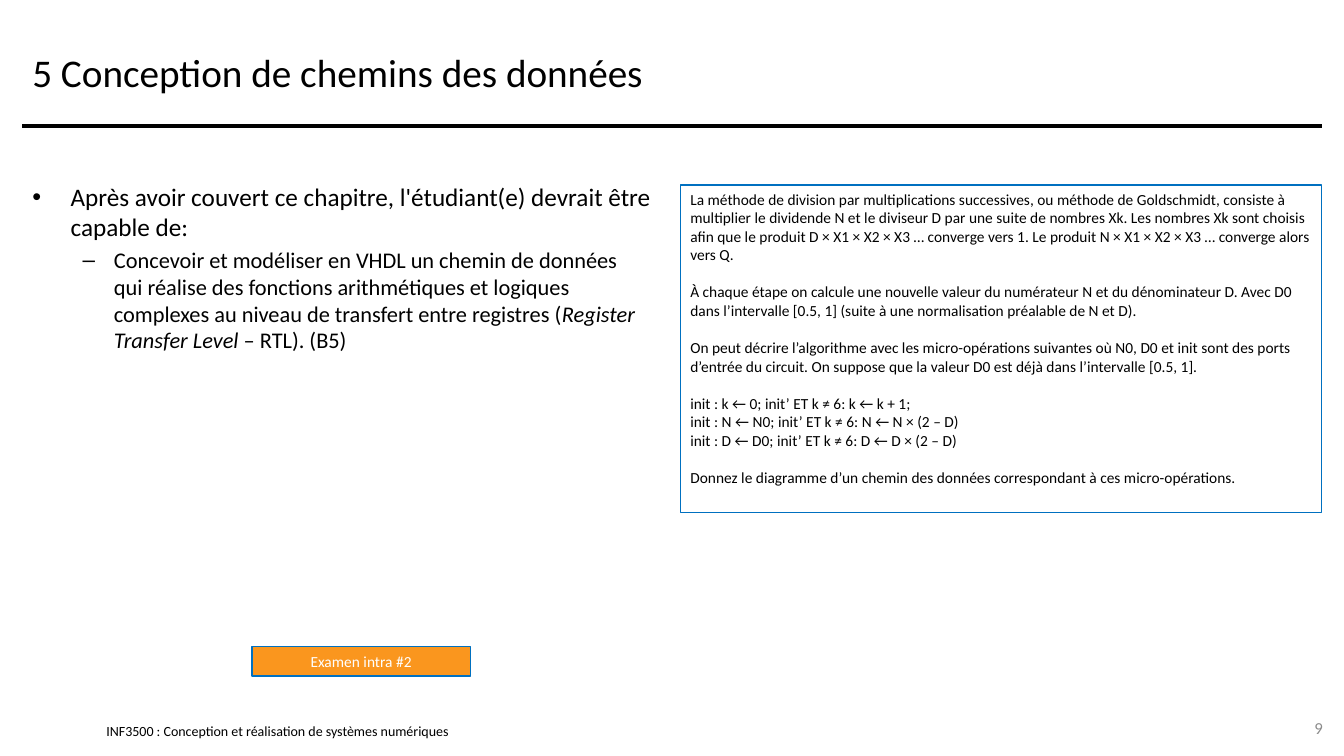
import pptx
import pptx.util
import pptx.dml.color
import pptx.enum.shapes
import pptx.enum.text
import lxml.etree
from pptx.oxml.ns import qn

Pt = pptx.util.Pt
RGBColor = pptx.dml.color.RGBColor
Align = pptx.enum.text.PP_ALIGN
Anchor = pptx.enum.text.MSO_ANCHOR

BLACK = RGBColor(0, 0, 0)
WHITE = RGBColor(255, 255, 255)
GREY = RGBColor(0x8C, 0x8C, 0x8C)
BLUE = RGBColor(0, 0x70, 0xC0)
ORANGE = RGBColor(0xFA, 0x96, 0x1E)

COLUMNS, ROWS = 160, 90
LEFT, RIGHT = 2.67, 157.33
CELL = pptx.util.Inches(1) / 12
BLANK_LINE = 13.4

EXERCISE = [
    ("La méthode de division par multiplications successives, ou méthode de Goldschmidt, consiste à "
     "multiplier le dividende N et le diviseur D par une suite de nombres Xk. Les nombres Xk sont choisis "
     "afin que le produit D × X1 × X2 × X3 … converge vers 1. Le produit N × X1 × X2 × X3 … converge alors "
     "vers Q.", 0),
    ("À chaque étape on calcule une nouvelle valeur du numérateur N et du dénominateur D. Avec D0 dans "
     "l’intervalle [0.5, 1] (suite à une normalisation préalable de N et D).", BLANK_LINE),
    ("On peut décrire l’algorithme avec les micro-opérations suivantes où N0, D0 et init sont des ports "
     "d’entrée du circuit. On suppose que la valeur D0 est déjà dans l’intervalle [0.5, 1].", BLANK_LINE),
    ("init : k ← 0; init’ ET k ≠ 6: k ← k + 1;", BLANK_LINE),
    ("init : N ← N0; init’ ET k ≠ 6: N ← N × (2 – D)", 0),
    ("init : D ← D0; init’ ET k ≠ 6: D ← D × (2 – D)", 0),
    ("Donnez le diagramme d’un chemin des données correspondant à ces micro-opérations.", BLANK_LINE),
]

OBJECTIVES = [
    ("•", 18, 0.38, -0.38, 0,
     [("Après avoir couvert ce chapitre, l'étudiant(e) devrait être capable de:", False)]),
    ("–", 16, 0.81, -0.31, 3,
     [("Concevoir et modéliser en VHDL un chemin de données qui réalise des fonctions arithmétiques et "
       "logiques complexes au niveau de transfert entre registres (", False),
      ("Register Transfer Level", True),
      (" – RTL). (B5)", False)]),
]


def grid(*cells):
    return [round(cell * CELL) for cell in cells]


def apply(target, formats):
    for name, value in formats.items():
        setattr(target, name, value)


def style(paragraph, size, color):
    apply(paragraph.font, {"name": "Calibri", "size": Pt(size)})
    paragraph.font.color.rgb = color


def text_frame(slide, box, **formats):
    frame = slide.shapes.add_textbox(*grid(*box)).text_frame
    apply(frame, {"word_wrap": True, **formats})
    return frame


def add_label(slide, box, text, size, color, align=Align.LEFT, **formats):
    frame = text_frame(slide, box, vertical_anchor=Anchor.MIDDLE, **formats)
    paragraph = frame.paragraphs[0]
    apply(paragraph, {"text": text, "alignment": align})
    style(paragraph, size, color)


def add_panel(slide, box, fill, color, align, lines):
    panel = slide.shapes.add_shape(pptx.enum.shapes.MSO_SHAPE.RECTANGLE, *grid(*box))
    panel.shadow.inherit = False
    panel.fill.solid()
    panel.fill.fore_color.rgb = fill
    panel.line.color.rgb = BLUE
    panel.line.width = Pt(1)
    frame = panel.text_frame
    apply(frame, {"word_wrap": True, "vertical_anchor": Anchor.TOP})
    for index, (text, gap) in enumerate(lines):
        paragraph = frame.add_paragraph() if index else frame.paragraphs[0]
        apply(paragraph, {"text": text, "alignment": align})
        if gap:
            paragraph.space_before = Pt(gap)
        style(paragraph, 11, color)


def add_header(slide, box):
    left, top, width, height = box
    add_label(slide, box, "5 Conception de chemins des données", 28, BLACK)
    base = top + height
    rule = slide.shapes.add_connector(pptx.enum.shapes.MSO_CONNECTOR.STRAIGHT,
                                      *grid(left, base, left + width, base))
    rule.line.color.rgb = BLACK
    rule.line.width = Pt(3)
    lxml.etree.SubElement(rule.element.spPr, qn("a:effectLst"))


def add_objectives(slide, box):
    frame = text_frame(slide, box)
    for index, (bullet, size, margin, indent, gap, runs) in enumerate(OBJECTIVES):
        paragraph = frame.add_paragraph() if index else frame.paragraphs[0]
        paragraph.level = index
        if gap:
            paragraph.space_before = Pt(gap)
        properties = paragraph._p.get_or_add_pPr()
        properties.set("marL", str(pptx.util.Inches(margin)))
        properties.set("indent", str(pptx.util.Inches(indent)))
        lxml.etree.SubElement(properties, qn("a:buFont"), typeface="Arial")
        lxml.etree.SubElement(properties, qn("a:buChar"), char=bullet)
        style(paragraph, size, BLACK)
        for text, italic in runs:
            run = paragraph.add_run()
            run.text = text
            run.font.italic = italic


def add_footer(slide, box):
    left, top, width, height = box
    insets = dict.fromkeys(("margin_left", "margin_top", "margin_right", "margin_bottom"), 0)
    add_label(slide, (left + 10, top + 1.75, 61.33, 2),
              "INF3500 : Conception et réalisation de systèmes numériques", 10, BLACK, **insets)
    add_label(slide, (left + width - 8, top, 8, height), "9", 12, GREY, Align.RIGHT)


def main():
    presentation = pptx.Presentation()
    apply(presentation, {"slide_width": round(COLUMNS * CELL), "slide_height": round(ROWS * CELL)})
    slide = presentation.slides.add_slide(presentation.slide_layouts[6])
    add_header(slide, (LEFT, 2, RIGHT - LEFT, 13))
    add_objectives(slide, (LEFT, 21, 76, 61))
    add_panel(slide, (81, 22, RIGHT - 81, 39), WHITE, BLACK, Align.LEFT, EXERCISE)
    add_panel(slide, (30, 77, 26, 3.5), ORANGE, WHITE, Align.CENTER, [("Examen intra #2", 0)])
    add_footer(slide, (LEFT, 84.25, 156, 4.8))
    presentation.save("out.pptx")


if __name__ == "__main__":
    main()
